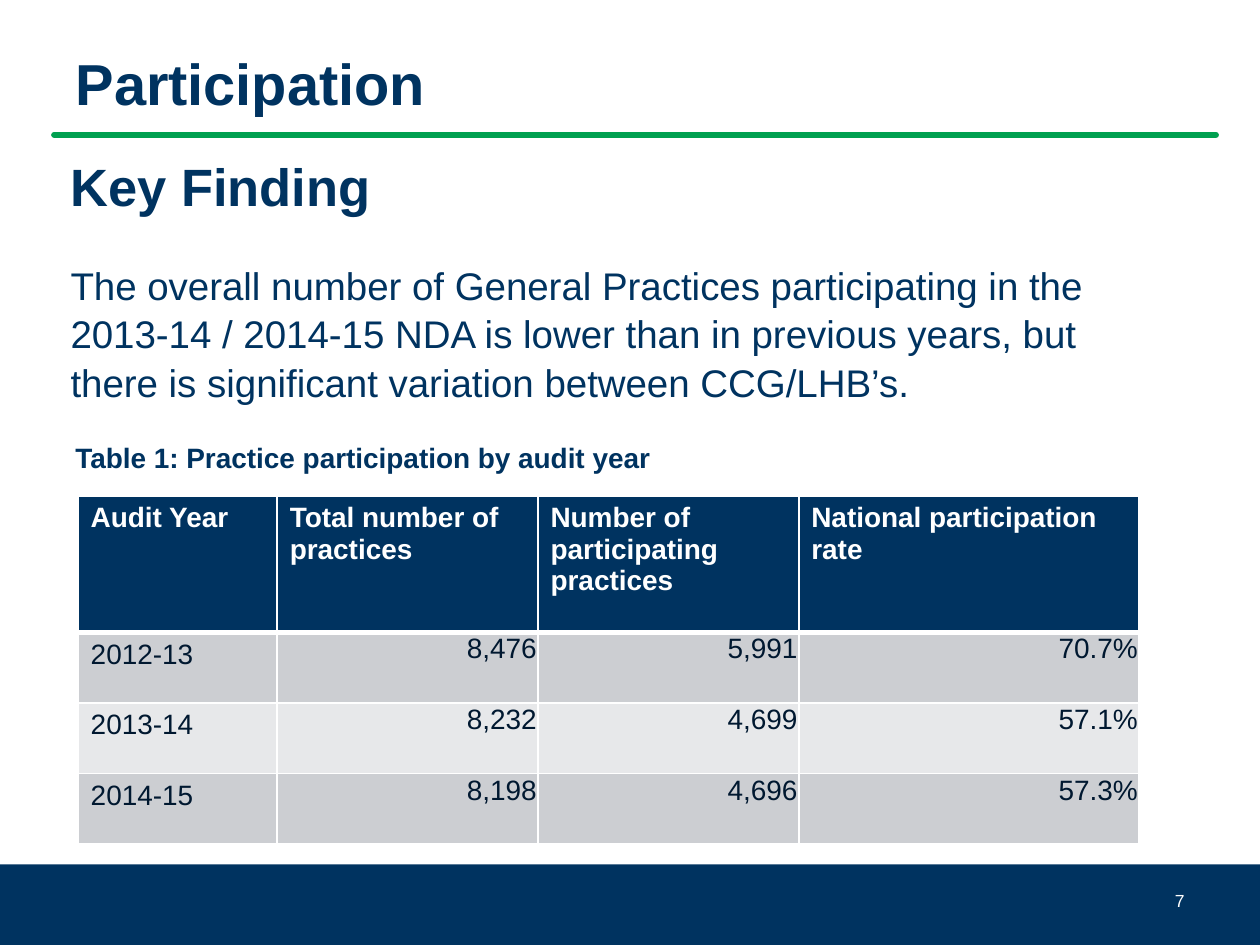
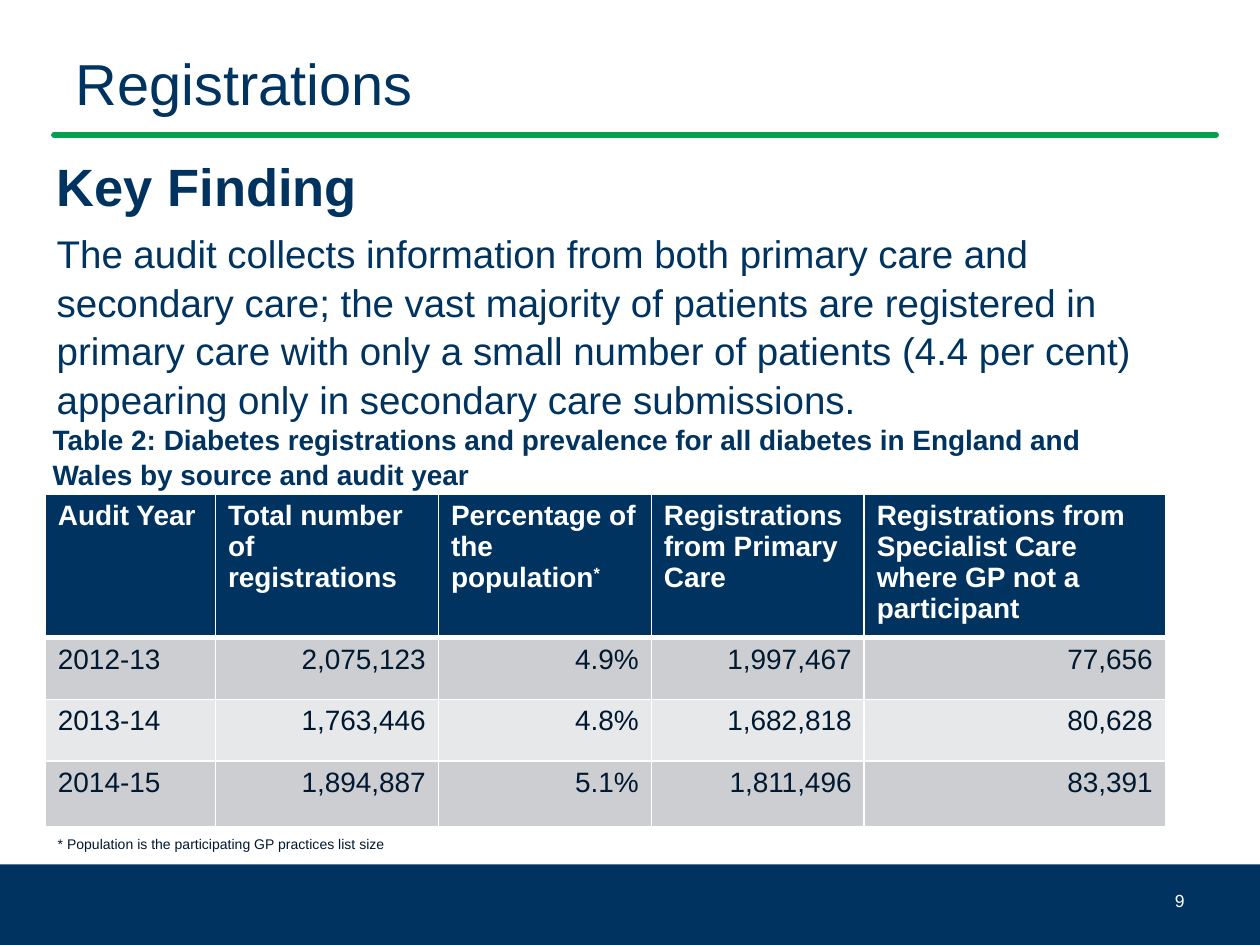
from dataclasses import dataclass
from typing import Optional

from lxml.etree import SubElement
from pptx import Presentation
from pptx.dml.color import RGBColor
from pptx.enum.shapes import MSO_CONNECTOR, MSO_SHAPE
from pptx.enum.text import MSO_ANCHOR, MSO_AUTO_SIZE, PP_ALIGN
from pptx.oxml.ns import qn
from pptx.util import Emu, Inches, Pt


@dataclass(frozen=True)
class Theme:
    font: str = "Arial"
    navy: str = "003360"
    green: str = "00A050"
    ink: str = "001830"
    white: str = "FFFFFF"
    dark: str = "CCCED2"
    light: str = "E7E8EA"
    title: float = 33
    head: float = 30
    body: float = 22
    table: float = 16
    page: float = 10
    note: float = 8
    lead: float = 1.05


@dataclass(frozen=True)
class Box:
    col: float
    row: float
    wide: float
    high: float


@dataclass(frozen=True)
class Grid:
    box: Box
    cols: tuple[float, ...]
    rows: tuple[float, ...]
    cells: tuple[tuple[str, ...], ...]
    tight: bool = False


@dataclass(frozen=True)
class Page:
    title: str
    bold: bool
    number: str
    body: Box
    gap: float
    finding: str
    label: Box
    caption: str
    grid: Grid
    note: Optional[str] = None


THEME = Theme()
WIDE, HIGH = Inches(10), Inches(7.5)
COLS, ROWS = 100, 75
TITLE = Box(5, 3, 90, 7.7)
BAND = Box(0, 68.6, COLS, 6.4)
RULE = Box(4.3, 10.7, 92.2, 0)
NUMBER = Box(71.7, 69.5, 23.3, 4)
NOTE = Box(3.6, 65.8, 80.3, 2.4)

PAGES = (
    Page(
        "Participation", True, "7",
        Box(4.6, 11.5, 87.4, 20.5), 24,
        "The overall number of General Practices participating in the 2013-14 / 2014-15 NDA "
        "is lower than in previous years, but there is significant variation between CCG/LHB’s.",
        Box(5, 34.4, 90, 3.7), "Table 1: Practice participation by audit year",
        Grid(
            Box(6.2, 39.4, 84.2, 27.6), (15.8, 20.7, 20.7, 27), (10.8, 5.6, 5.6, 5.6),
            (
                ("Audit Year", "Total number of practices",
                 "Number of participating practices", "National participation rate"),
                ("2012-13", "8,476", "5,991", "70.7%"),
                ("2013-14", "8,232", "4,699", "57.1%"),
                ("2014-15", "8,198", "4,696", "57.3%"),
            ),
            tight=True,
        ),
    ),
    Page(
        "Registrations", False, "9",
        Box(3.5, 11.5, 93.7, 21.7), 6,
        "The audit collects information from both primary care and secondary care; the vast "
        "majority of patients are registered in primary care with only a small number of "
        "patients (4.4 per cent) appearing only in secondary care submissions.",
        Box(3.2, 33, 90, 6.4),
        "Table 2: Diabetes registrations and prevalence for all diabetes in England and Wales "
        "by source and audit year",
        Grid(
            Box(3.6, 39.2, 88.9, 26.7), (13.5, 17.7, 16.9, 16.9, 23.9), (11.4, 4.9, 4.9, 5.2),
            (
                ("Audit Year", "Total number of registrations", "Percentage of the population*",
                 "Registrations from Primary Care",
                 "Registrations from Specialist Care where GP not a participant"),
                ("2012-13", "2,075,123", "4.9%", "1,997,467", "77,656"),
                ("2013-14", "1,763,446", "4.8%", "1,682,818", "80,628"),
                ("2014-15", "1,894,887", "5.1%", "1,811,496", "83,391"),
            ),
        ),
        "* Population is the participating GP practices list size",
    ),
)


def across(cols: float) -> Emu:
    return Emu(round(WIDE * cols / COLS))


def down(rows: float) -> Emu:
    return Emu(round(HIGH * rows / ROWS))


def frame(box: Box) -> tuple[Emu, Emu, Emu, Emu]:
    return across(box.col), down(box.row), across(box.wide), down(box.high)


def place(shape, box: Box) -> None:
    shape.left, shape.top, shape.width, shape.height = frame(box)


def write(para, text: str, size: float, color: str, bold: bool = False):
    run = para.add_run()
    run.text = text
    font = run.font
    font.name, font.size, font.bold = THEME.font, Pt(size), bold
    font.color.rgb = RGBColor.from_string(color)
    return run


def setup(text, anchor: MSO_ANCHOR) -> None:
    text.word_wrap = True
    text.auto_size = MSO_AUTO_SIZE.NONE
    text.vertical_anchor = anchor


def label(slide, box: Box, words: str, size: float, color: str, bold: bool = False,
          align: PP_ALIGN = PP_ALIGN.LEFT, anchor: MSO_ANCHOR = MSO_ANCHOR.MIDDLE,
          lead: float = 1.0) -> None:
    text = slide.shapes.add_textbox(*frame(box)).text_frame
    setup(text, anchor)
    para = text.paragraphs[0]
    para.alignment, para.line_spacing = align, lead
    write(para, words, size, color, bold)


def dress(layout, slide) -> None:
    band = slide.shapes.add_shape(MSO_SHAPE.RECTANGLE, *frame(BAND))
    band.shadow.inherit = False
    band.fill.solid()
    band.fill.fore_color.rgb = RGBColor.from_string(THEME.navy)
    band.line.fill.background()
    left, top, wide, _ = frame(RULE)
    rule = slide.shapes.add_connector(MSO_CONNECTOR.STRAIGHT, left, top, left + wide, top)
    rule.line.color.rgb = RGBColor.from_string(THEME.green)
    rule.line.width = Pt(3.5)
    props = rule.element.spPr
    props.find(qn("a:ln")).set("cap", "rnd")
    SubElement(props, qn("a:effectLst"))
    for shape in (band, rule):
        layout.shapes.element.append(shape.element)


def head(slide, page: Page) -> None:
    title = slide.shapes.title
    place(title, TITLE)
    text = title.text_frame
    setup(text, MSO_ANCHOR.TOP)
    para = text.paragraphs[0]
    para.alignment, para.line_spacing = PP_ALIGN.LEFT, THEME.lead
    write(para, page.title, THEME.title, THEME.navy, page.bold)


def body(slide, page: Page) -> None:
    shape = slide.placeholders[1]
    place(shape, page.body)
    text = shape.text_frame
    setup(text, MSO_ANCHOR.TOP)
    first, last = text.paragraphs[0], text.add_paragraph()
    for para, after in ((first, page.gap), (last, 0)):
        para.line_spacing = THEME.lead
        para.space_before, para.space_after = Pt(0), Pt(after)
        props = para._p.get_or_add_pPr()
        props.set("marL", "0")
        props.set("indent", "0")
        SubElement(props, qn("a:buNone"))
    write(first, "Key Finding", THEME.head, THEME.navy, True)
    write(last, page.finding, THEME.body, THEME.navy)


def border(cell, base: float) -> None:
    props = cell._tc.get_or_add_tcPr()
    for spot, (side, width) in enumerate((("L", 1), ("R", 1), ("T", 1), ("B", base))):
        line = props.makeelement(qn(f"a:ln{side}"), {"w": str(Pt(width))})
        fill = SubElement(line, qn("a:solidFill"))
        SubElement(fill, qn("a:srgbClr")).set("val", THEME.white)
        props.insert(spot, line)


def fill(cell, words: str, row: int, col: int, tight: bool) -> None:
    top = row == 0
    shade = THEME.navy if top else THEME.dark if row % 2 else THEME.light
    cell.fill.solid()
    cell.fill.fore_color.rgb = RGBColor.from_string(shade)
    border(cell, 3 if top else 1)
    para = cell.text_frame.paragraphs[0]
    if not top and col:
        para.alignment = PP_ALIGN.RIGHT
        if tight:
            cell.margin_left = cell.margin_right = cell.margin_top = Inches(0.01)
            cell.margin_bottom = 0
    color = THEME.white if top else THEME.ink
    main, star, _ = words.partition("*")
    write(para, main, THEME.table, color, top)
    if star:
        run = write(para, star, THEME.table, color, top)
        run._r.get_or_add_rPr().set("baseline", "30000")


def chart(slide, grid: Grid) -> None:
    table = slide.shapes.add_table(len(grid.rows), len(grid.cols), *frame(grid.box)).table
    for col, wide in zip(table.columns, grid.cols):
        col.width = across(wide)
    for row, high in zip(table.rows, grid.rows):
        row.height = down(high)
    for row, line in enumerate(grid.cells):
        for col, words in enumerate(line):
            fill(table.cell(row, col), words, row, col, grid.tight)


def build(deck, layout, page: Page):
    slide = deck.slides.add_slide(layout)
    head(slide, page)
    label(slide, NUMBER, page.number, THEME.page, THEME.white, align=PP_ALIGN.RIGHT)
    chart(slide, page.grid)
    body(slide, page)
    if page.note:
        label(slide, NOTE, page.note, THEME.note, THEME.ink, anchor=MSO_ANCHOR.TOP)
    label(slide, page.label, page.caption, THEME.table, THEME.navy, True, lead=THEME.lead)
    return slide


def main() -> None:
    deck = Presentation()
    deck.slide_width, deck.slide_height = WIDE, HIGH
    layout = deck.slide_layouts[1]
    slides = [build(deck, layout, page) for page in PAGES]
    dress(layout, slides[0])
    deck.save("out.pptx")


if __name__ == "__main__":
    main()
